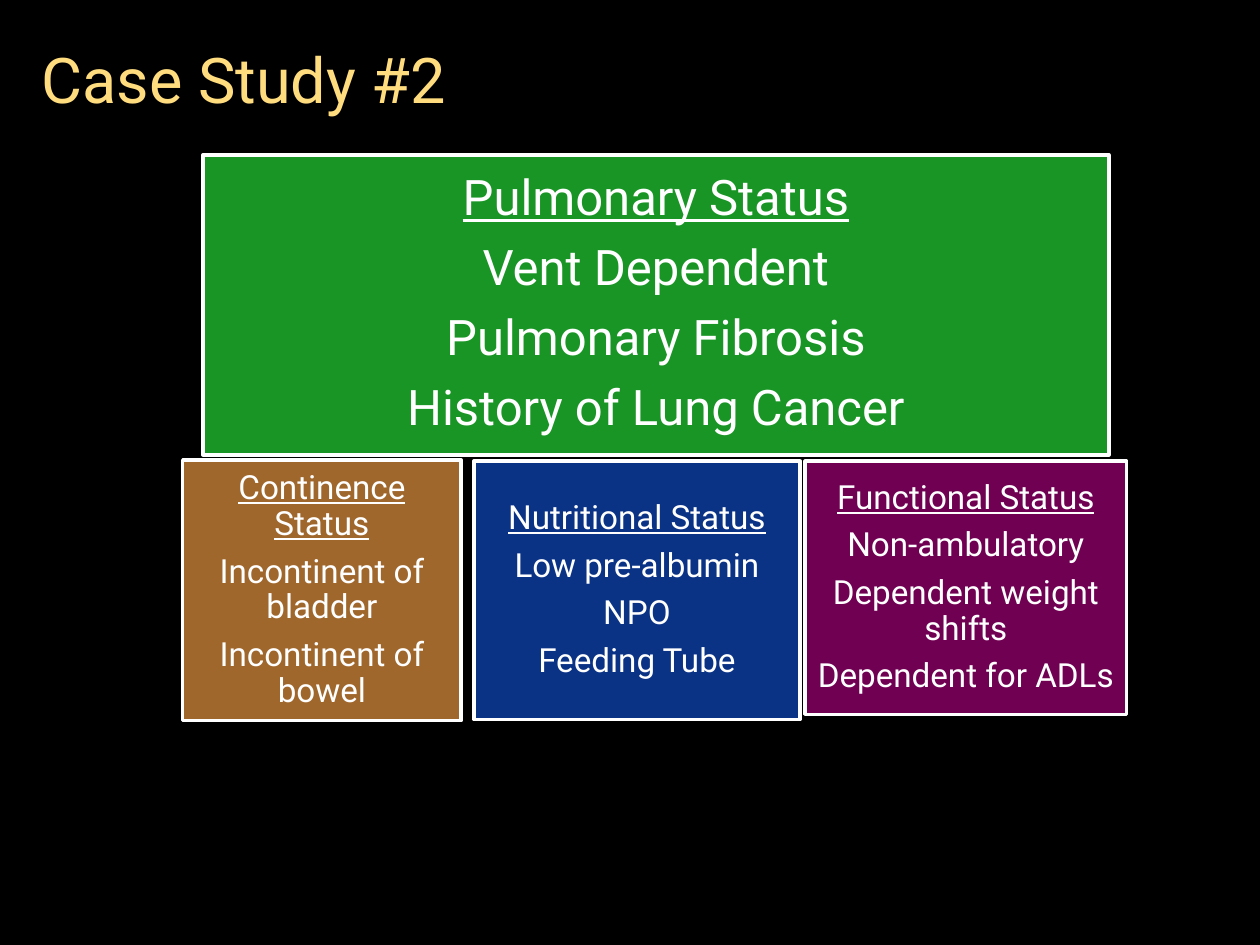
from pptx import Presentation
from pptx.dml.color import RGBColor
from pptx.enum.shapes import MSO_SHAPE
from pptx.enum.text import MSO_ANCHOR, PP_ALIGN
from pptx.util import Inches, Pt

RECT = MSO_SHAPE.RECTANGLE
TOP, MIDDLE = MSO_ANCHOR.TOP, MSO_ANCHOR.MIDDLE
LEFT, CENTER = PP_ALIGN.LEFT, PP_ALIGN.CENTER

COLORS = {
    "back": "000000", "title": "FFDD7F", "text": "FFFFFF",
    "green": "199525", "brown": "A0672D", "blue": "0A3285", "plum": "700052",
}
WIDE, HIGH = 10, 7.5
COLS, ROWS = 100, 75


class Deck:
    font = "Roboto"
    gap = 0.35

    def __init__(self):
        self.prs = Presentation()
        self.prs.slide_width = Inches(WIDE)
        self.prs.slide_height = Inches(HIGH)
        self.slide = self.prs.slides.add_slide(self.prs.slide_layouts[5])
        self.paint(self.slide.background.fill, "back")

    def paint(self, fill, name):
        fill.solid()
        fill.fore_color.rgb = RGBColor.from_string(COLORS[name])

    def place(self, col, row, cols, rows):
        wide, high = Inches(WIDE) / COLS, Inches(HIGH) / ROWS
        return [round(n) for n in (col * wide, row * high, cols * wide, rows * high)]

    def style(self, para, size, color):
        para.font.name = self.font
        para.font.size = Pt(size)
        para.font.color.rgb = RGBColor.from_string(COLORS[color])

    def title(self, text, *cells):
        shape = self.slide.shapes.title
        shape.left, shape.top, shape.width, shape.height = self.place(*cells)
        frame = shape.text_frame
        frame.text = text
        frame.vertical_anchor = TOP
        para = frame.paragraphs[0]
        para.alignment = LEFT
        self.style(para, 36, "title")

    def card(self, lines, color, size, inset, *cells):
        shape = self.slide.shapes.add_shape(RECT, *self.place(*cells))
        shape.shadow.inherit = False
        self.paint(shape.fill, color)
        self.paint(shape.line.fill, "text")
        shape.line.width = Pt(2)
        frame = shape.text_frame
        frame.word_wrap = True
        frame.vertical_anchor = MIDDLE
        frame.margin_left = frame.margin_right = Inches(inset)
        frame.margin_top = frame.margin_bottom = Inches(inset)
        frame.text = "\n".join(lines)
        for para in frame.paragraphs:
            para.alignment = CENTER
            para.line_spacing = 0.9
            para.space_after = Pt(round(size * self.gap, 1))
            self.style(para, size, "text")
        frame.paragraphs[0].font.underline = True


def main():
    deck = Deck()
    deck.title("Case Study #2", 2.3, 2.7, 90, 12.8)
    deck.card(["Continence Status", "Incontinent of bladder", "Incontinent of bowel"],
              "brown", 19, 0.08, 14.5, 36.5, 22.1, 20.7)
    deck.card(["Pulmonary Status", "Vent Dependent", "Pulmonary Fibrosis",
               "History of Lung Cancer"],
              "green", 28, 0.12, 16.1, 12.3, 71.9, 23.8)
    deck.card(["Nutritional Status", "Low pre-albumin", "NPO", "Feeding Tube"],
              "blue", 19, 0.08, 37.6, 36.6, 25.9, 20.5)
    deck.card(["Functional Status", "Non-ambulatory", "Dependent weight shifts",
               "Dependent for ADLs"],
              "plum", 19, 0.08, 63.9, 36.6, 25.5, 20.1)
    deck.prs.save("out.pptx")


if __name__ == "__main__":
    main()
